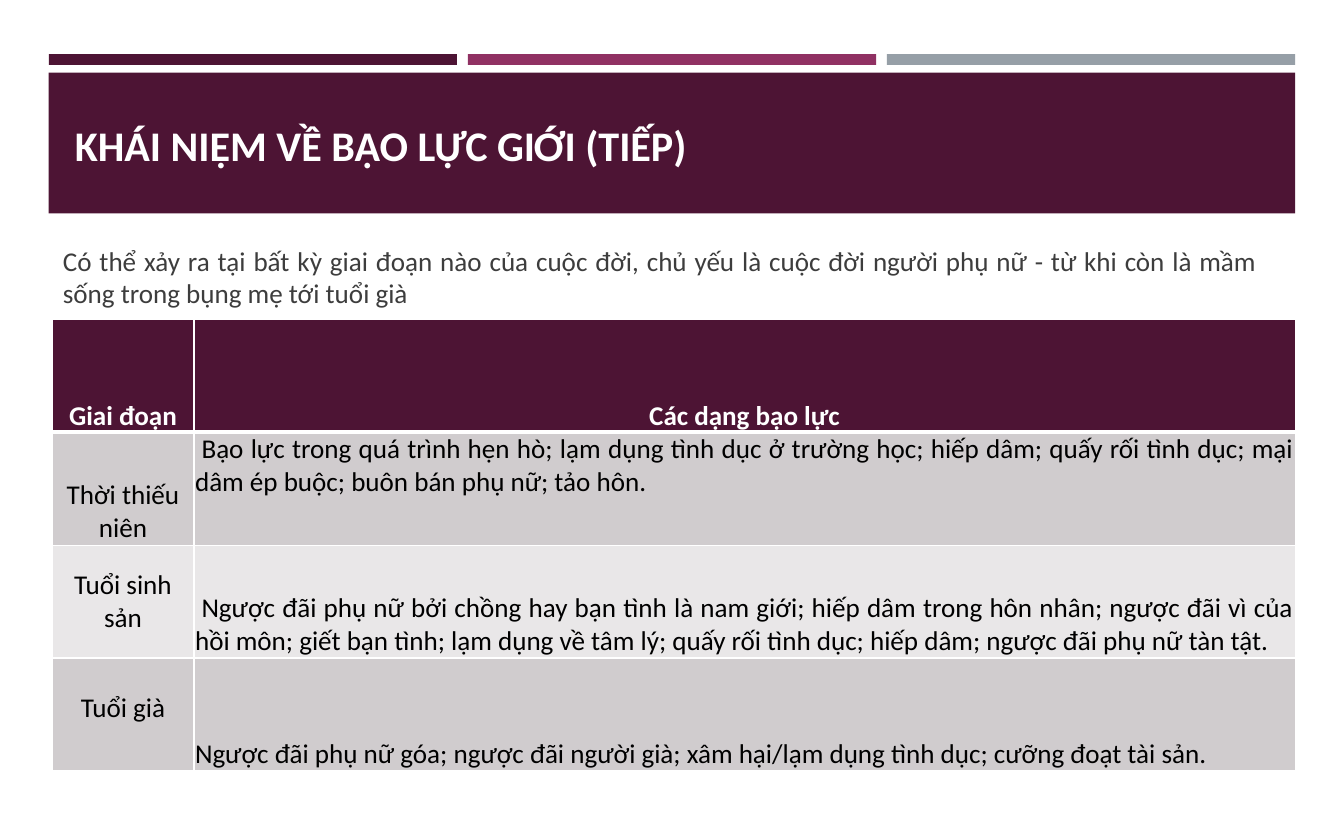
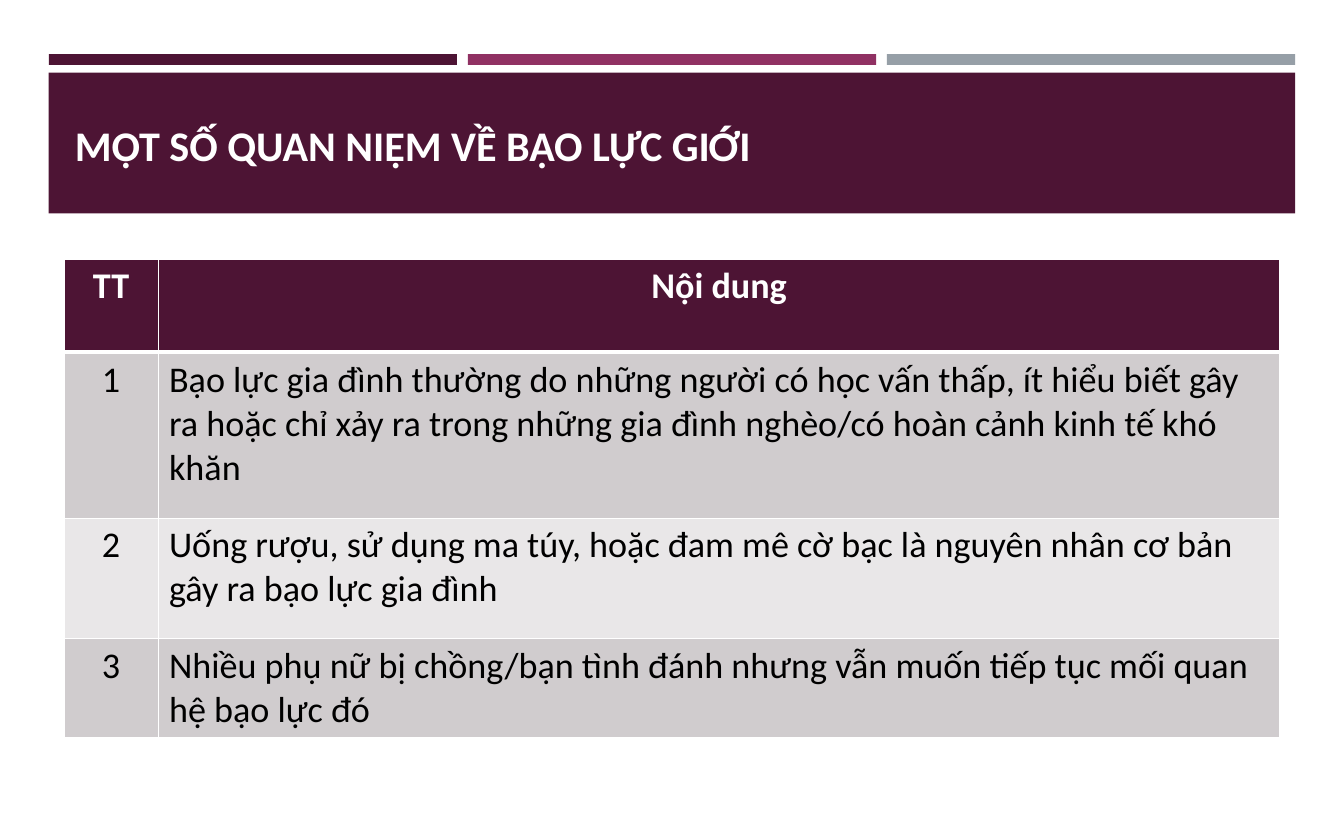
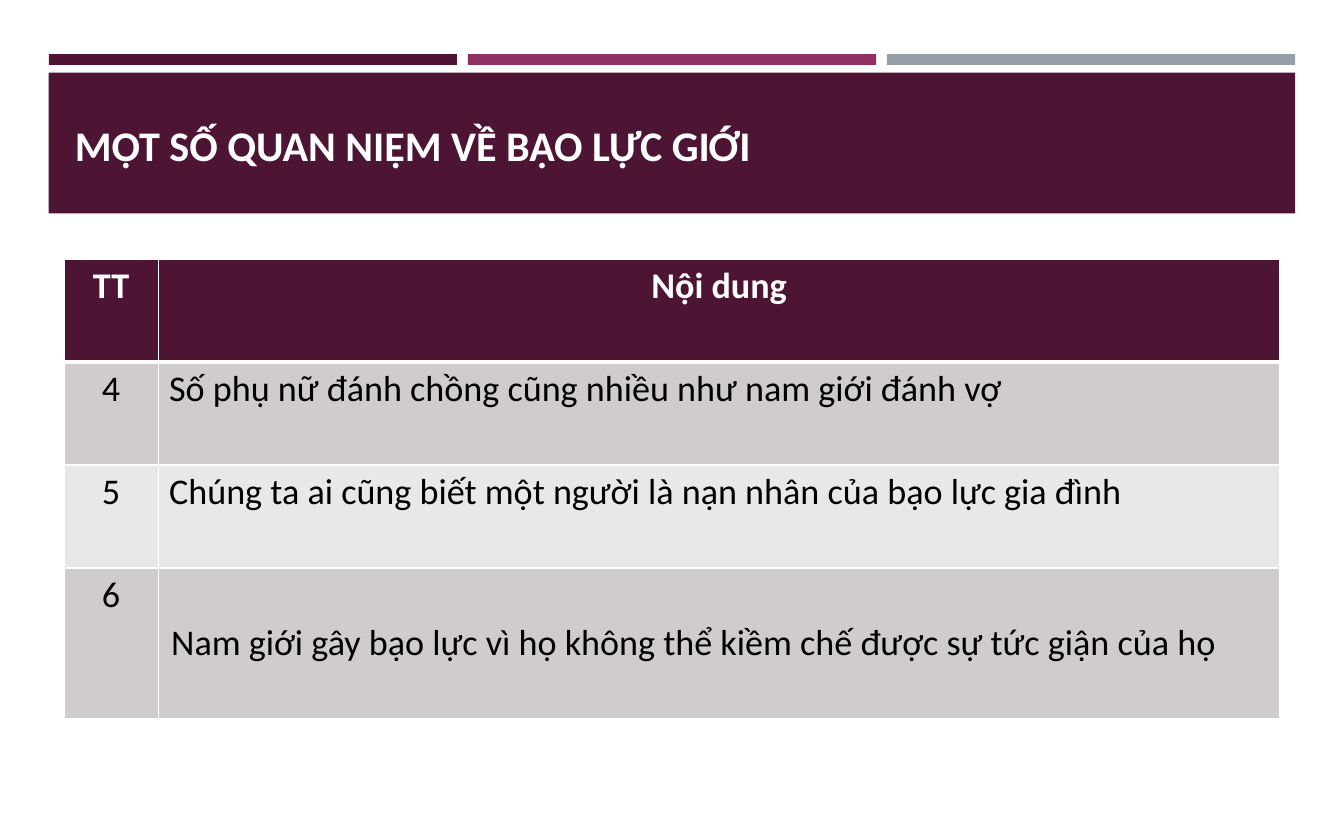
from dataclasses import dataclass

from lxml.etree import SubElement
from pptx import Presentation
from pptx.dml.color import RGBColor
from pptx.enum.shapes import MSO_SHAPE
from pptx.enum.text import MSO_ANCHOR, MSO_AUTO_SIZE, PP_ALIGN
from pptx.oxml.ns import qn
from pptx.util import Emu, Inches, Pt

FONT = "Calibri"
PLUM, MAGENTA, GREY = "4D1434", "903163", "969FA7"
WHITE, BLACK, BODY_TEXT = "FFFFFF", "000000", "3D3D3D"
ROW_FILLS = ("D0CCCE", "E9E7E8")

SLIDE_W, SLIDE_H = 12.4, 7.5
MARGIN, GAP = 0.45, 0.1
BAND_W = SLIDE_W - 2 * MARGIN
BAR_W = (BAND_W - 2 * GAP) / 3

LEFT, CENTER, JUSTIFY = PP_ALIGN.LEFT, PP_ALIGN.CENTER, PP_ALIGN.JUSTIFY
TOP, MIDDLE, BOTTOM = MSO_ANCHOR.TOP, MSO_ANCHOR.MIDDLE, MSO_ANCHOR.BOTTOM

TIGHT = (0.01, 0, 0.01, 0)
ROOMY = (0.1, 0.05, 0.1, 0.05)
LOWERED = (0.01, 0.31, 0.01, 0)


@dataclass(frozen=True)
class Cell:
    text: str
    align: PP_ALIGN = LEFT
    anchor: MSO_ANCHOR = TOP
    margins: tuple = ROOMY
    indent: float = 0


@dataclass(frozen=True)
class Table:
    left: float
    top: float
    cols: tuple
    heights: tuple
    size: int
    rows: list


def rgb(value: str) -> RGBColor:
    return RGBColor.from_string(value)


def place(shape, left: float, top: float, width: float, height: float) -> None:
    shape.left, shape.top = Inches(left), Inches(top)
    shape.width, shape.height = Inches(width), Inches(height)


def write(tf, text: str, *, size: int, color: str, bold: bool = False,
          align: PP_ALIGN = LEFT, indent: float = 0) -> None:
    """Fill a text frame with one unbulleted paragraph."""
    tf.word_wrap = True
    p = tf.paragraphs[0]
    p.alignment = align
    p.line_spacing = 1.0
    p.space_before = p.space_after = Pt(0)
    pPr = p._p.get_or_add_pPr()
    pPr.set("marL", "0")
    pPr.set("indent", str(Inches(indent)))
    SubElement(pPr, qn("a:buNone"))
    r = p.add_run()
    r.text = text
    r.font.name, r.font.size, r.font.bold = FONT, Pt(size), bold
    r.font.color.rgb = rgb(color)


def add_master_bands(prs, s) -> None:
    """Draw the bands on a slide, then move them to the master it uses."""
    bands = [(MARGIN + i * (BAR_W + GAP), 0.5, BAR_W, 0.1, color)
             for i, color in enumerate((PLUM, MAGENTA, GREY))]
    bands.append((MARGIN, 0.67, BAND_W, 1.3, PLUM))
    for number, (left, top, width, height, color) in enumerate(bands, 101):
        sp = s.shapes.add_shape(MSO_SHAPE.RECTANGLE, Inches(left), Inches(top),
                                Inches(width), Inches(height))
        sp.shadow.inherit = False
        sp.fill.solid()
        sp.fill.fore_color.rgb = rgb(color)
        sp.line.fill.background()
        sp.element.nvSpPr.cNvPr.set("id", str(number))
        prs.slide_master.shapes.element.insert(2, sp.element)


def add_slide(prs, layout: int, title: str):
    s = prs.slides.add_slide(prs.slide_layouts[layout])
    sp = s.shapes.title
    place(sp, 0.59, 0.77, 11.22, 0.85)
    tf = sp.text_frame
    tf.auto_size, tf.vertical_anchor = MSO_AUTO_SIZE.NONE, BOTTOM
    write(tf, title, size=28, color=WHITE, bold=True)
    return s


def add_body(s, text: str) -> None:
    sp = s.placeholders[1]
    place(sp, 0.48, 2.2, 11.22, 0.72)
    tf = sp.text_frame
    tf.auto_size, tf.vertical_anchor = MSO_AUTO_SIZE.NONE, TOP
    write(tf, text, size=18, color=BODY_TEXT, align=JUSTIFY)


def set_borders(cell, top: float, bottom: float) -> None:
    tcPr = cell._tc.get_or_add_tcPr()
    for side, width in (("L", 1), ("R", 1), ("T", top), ("B", bottom)):
        ln = SubElement(tcPr, qn(f"a:ln{side}"), w=str(Pt(width)))
        fill = SubElement(ln, qn("a:solidFill"))
        SubElement(fill, qn("a:srgbClr"), val=WHITE)


def fill_cell(cell, content: Cell, row: int, size: int) -> None:
    header = row == 0
    set_borders(cell, 3 if row == 1 else 1, 3 if header else 1)
    cell.fill.solid()
    cell.fill.fore_color.rgb = rgb(PLUM if header else ROW_FILLS[(row - 1) % 2])
    cell.vertical_anchor = content.anchor
    (cell.margin_left, cell.margin_top,
     cell.margin_right, cell.margin_bottom) = map(Inches, content.margins)
    write(cell.text_frame, content.text, size=size, bold=header,
          color=WHITE if header else BLACK,
          align=content.align, indent=content.indent)


def add_table(s, spec_table: Table) -> None:
    t = spec_table
    table = s.shapes.add_table(
        len(t.heights), len(t.cols), Inches(t.left), Inches(t.top),
        Inches(sum(t.cols)), Inches(sum(t.heights))).table
    for column, width in zip(table.columns, t.cols):
        column.width = Emu(Inches(width))
    for i, (row, height) in enumerate(zip(table.rows, t.heights)):
        row.height = Emu(Inches(height))
        for cell, content in zip(row.cells, t.rows[i]):
            fill_cell(cell, content, i, t.size)


def numbered_table(heights: tuple, items: list) -> Table:
    """Table of numbered statements; items are (number, content cell)."""
    header = [Cell("TT", CENTER), Cell("Nội dung", CENTER)]
    rows = [[Cell(str(number), CENTER), cell] for number, cell in items]
    return Table(0.59, 2.39, (0.87, 10.35), heights, 24, [header] + rows)


STAGES = Table(0.48, 2.95, (1.31, 10.16), (1.04,) * 4, 18, [
    [Cell("Giai đoạn", CENTER, BOTTOM, TIGHT),
     Cell("Các dạng bạo lực", CENTER, BOTTOM, TIGHT)],
    [Cell("Thời thiếu niên", CENTER, BOTTOM, TIGHT),
     Cell("Bạo lực trong quá trình hẹn hò; lạm dụng tình dục ở trường học; "
          "hiếp dâm; quấy rối tình dục; mại dâm ép buộc; buôn bán phụ nữ; "
          "tảo hôn.", JUSTIFY, TOP, TIGHT, 0.06)],
    [Cell("Tuổi sinh sản", CENTER, MIDDLE, TIGHT),
     Cell("Ngược đãi phụ nữ bởi chồng hay bạn tình là nam giới; hiếp dâm "
          "trong hôn nhân; ngược đãi vì của hồi môn; giết bạn tình; lạm dụng "
          "về tâm lý; quấy rối tình dục; hiếp dâm; ngược đãi phụ nữ tàn tật.",
          JUSTIFY, BOTTOM, TIGHT, 0.06)],
    [Cell("Tuổi già", CENTER, TOP, LOWERED),
     Cell("Ngược đãi phụ nữ góa; ngược đãi người già; xâm hại/lạm dụng "
          "tình dục; cưỡng đoạt tài sản.", JUSTIFY, BOTTOM, TIGHT)],
])

BELIEFS = [
    numbered_table((0.86, 1.53, 1.11, 0.91), [
        (1, Cell("Bạo lực gia đình thường do những người có học vấn thấp, ít "
                 "hiểu biết gây ra hoặc chỉ xảy ra trong những gia đình "
                 "nghèo/có hoàn cảnh kinh tế khó khăn")),
        (2, Cell("Uống rượu, sử dụng ma túy, hoặc đam mê cờ bạc là nguyên "
                 "nhân cơ bản gây ra bạo lực gia đình")),
        (3, Cell("Nhiều phụ nữ bị chồng/bạn tình đánh nhưng vẫn muốn tiếp "
                 "tục mối quan hệ bạo lực đó")),
    ]),
    numbered_table((0.95, 0.95, 0.95, 1.39), [
        (4, Cell("Số phụ nữ đánh chồng cũng nhiều như nam giới đánh vợ")),
        (5, Cell("Chúng ta ai cũng biết một người là nạn nhân của bạo lực "
                 "gia đình")),
        (6, Cell("Nam giới gây bạo lực vì họ không thể kiềm chế được sự tức "
                 "giận của họ", JUSTIFY, MIDDLE, TIGHT, 0.11)),
    ]),
]


def main() -> None:
    prs = Presentation()
    prs.slide_width, prs.slide_height = Inches(SLIDE_W), Inches(SLIDE_H)

    s = add_slide(prs, 1, "KHÁI NIỆM VỀ BẠO LỰC GIỚI (TIẾP)")
    add_master_bands(prs, s)
    add_body(s, "Có thể xảy ra tại bất kỳ giai đoạn nào của cuộc đời, chủ yếu "
                "là cuộc đời người phụ nữ - từ khi còn là mầm sống trong bụng "
                "mẹ tới tuổi già")
    add_table(s, STAGES)

    for beliefs in BELIEFS:
        s = add_slide(prs, 5, "MỘT SỐ QUAN NIỆM VỀ BẠO LỰC GIỚI")
        add_table(s, beliefs)

    prs.save("out.pptx")


if __name__ == "__main__":
    main()
